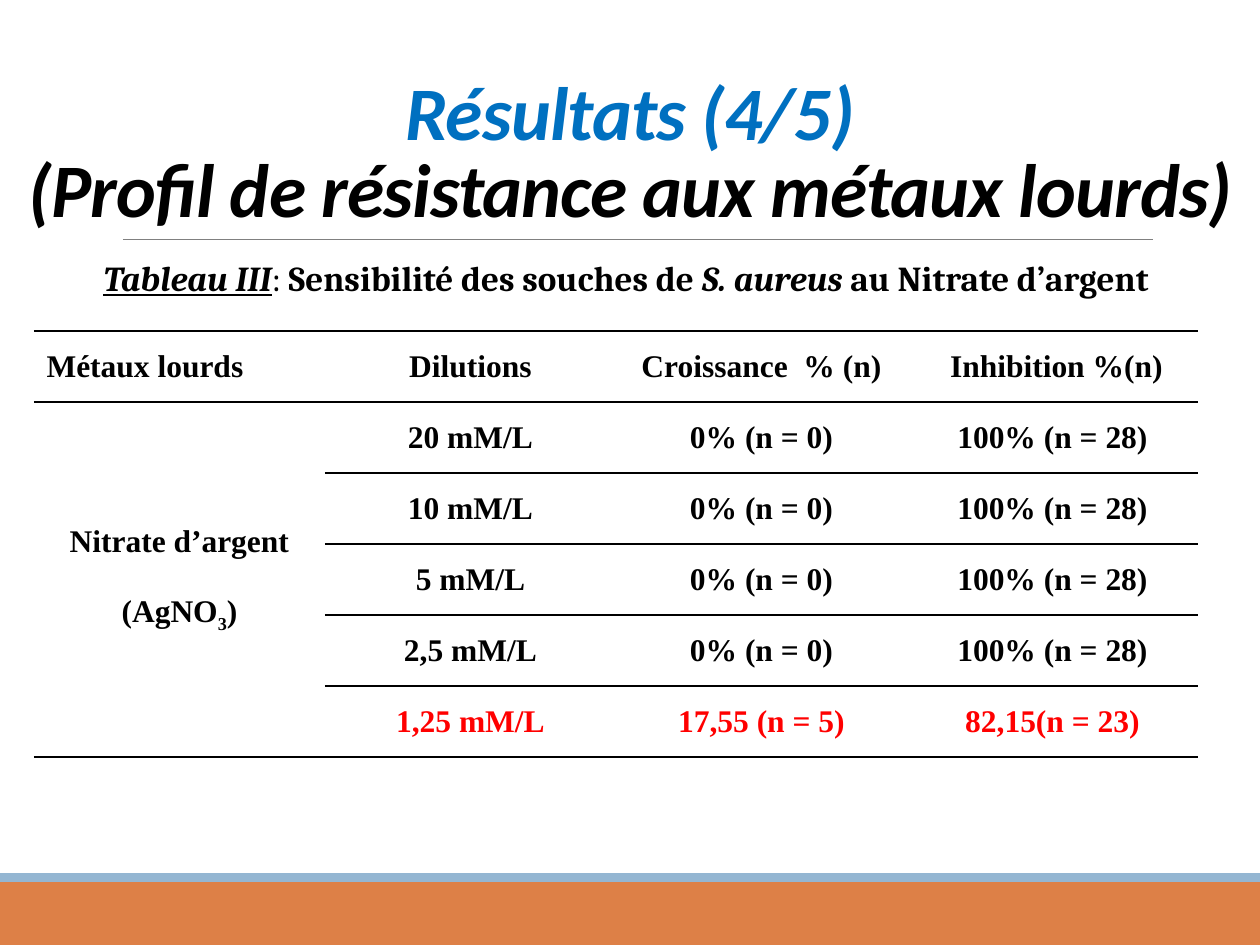
from dataclasses import dataclass
from typing import Optional

from lxml.etree import SubElement
from pptx import Presentation
from pptx.dml.color import RGBColor
from pptx.enum.shapes import MSO_CONNECTOR, MSO_SHAPE
from pptx.enum.text import MSO_ANCHOR, PP_ALIGN
from pptx.oxml.ns import qn
from pptx.util import Emu, Pt

PX = 914400 / 126  # EMU in one px


@dataclass(frozen=True)
class Theme:
    orange: str = "DD8047"
    sky: str = "94B6D2"
    grey: str = "808080"
    blue: str = "0070C0"
    black: str = "000000"
    red: str = "FF0000"
    title_size: float = 43.2
    caption_size: float = 20
    table_size: float = 18
    title_font: str = "Calibri"
    caption_font: str = "Cambria"
    table_font: str = "Times New Roman"


@dataclass(frozen=True)
class Box:
    x: int
    y: int
    w: int
    h: int


@dataclass(frozen=True)
class Piece:
    text: str
    color: str
    bold: bool = True
    italic: bool = False
    underline: bool = False
    spacing: Optional[int] = None  # hundredths of a point
    baseline: Optional[int] = None  # thousandths of a percent


T = Theme()
NO_STYLE = "{2D5ABB26-0587-4C30-8999-92F81FD0307C}"

BANDS = [(Box(0, 882, 1260, 63), T.orange), (Box(0, 873, 1260, 9), T.sky)]
TITLE = [
    Piece("Résultats (4/5)", T.blue, italic=True, spacing=-50),
    Piece("(Profil de résistance aux métaux lourds)", T.black, italic=True, spacing=-50),
]
CAPTION = [
    Piece("Tableau III", T.black, italic=True, underline=True),
    Piece(": ", T.black, bold=False),
    Piece("Sensibilité des souches de ", T.black),
    Piece("S. aureus ", T.black, italic=True),
    Piece("au Nitrate d’argent ", T.black),
]
METAL = [Piece("Nitrate d’argent", T.black)]
FORMULA = [
    Piece("(AgNO", T.black),
    Piece("3", T.black, baseline=-25000),
    Piece(")", T.black),
]
HEADER = ["Métaux lourds", "Dilutions", "Croissance  % (n)", " Inhibition %(n)"]
NONE_GROWN, ALL_STOPPED = "0% (n = 0)", "100% (n = 28)"
RESULTS = [(f"{d} mM/L", NONE_GROWN, ALL_STOPPED) for d in ("20", "10", "5", "2,5")]
RESULTS.append(("1,25 mM/L", "17,55 (n = 5)", "82,15(n = 23)"))
COL_W, ROW_H = 291, 71


def px(n: int) -> Emu:
    return Emu(round(n * PX))


def rgb(color: str) -> RGBColor:
    return RGBColor.from_string(color)


def place(box: Box) -> tuple[Emu, Emu, Emu, Emu]:
    return px(box.x), px(box.y), px(box.w), px(box.h)


def write(p, pieces: list[Piece], font: str, size: float, align=PP_ALIGN.CENTER,
          break_lines: bool = False) -> None:
    p.alignment = align
    for i, piece in enumerate(pieces):
        if break_lines and i:
            p.add_line_break()
        r = p.add_run()
        r.text = piece.text
        f = r.font
        f.name, f.size = font, Pt(size)
        f.bold, f.italic, f.underline = piece.bold, piece.italic, piece.underline
        f.color.rgb = rgb(piece.color)
        for key, value in (("spc", piece.spacing), ("baseline", piece.baseline)):
            if value is not None:
                f._element.set(key, str(value))


def add_band(slide, box: Box, color: str) -> None:
    sp = slide.shapes.add_shape(MSO_SHAPE.RECTANGLE, *place(box))
    sp.shadow.inherit = False
    sp.fill.solid()
    sp.fill.fore_color.rgb = rgb(color)
    sp.line.fill.background()


def add_rule(slide, x1: int, x2: int, y: int) -> None:
    line = slide.shapes.add_connector(MSO_CONNECTOR.STRAIGHT, px(x1), px(y), px(x2), px(y))
    line.line.color.rgb = rgb(T.grey)
    line.line.width = Pt(0.5)
    SubElement(line._element.spPr, qn("a:effectLst"))


def add_text(slide, box: Box, anchor):
    tf = slide.shapes.add_textbox(*place(box)).text_frame
    tf.word_wrap = True
    tf.vertical_anchor = anchor
    return tf.paragraphs[0]


def style_cell(cell, top: bool, bottom: bool) -> None:
    cell.vertical_anchor = MSO_ANCHOR.MIDDLE
    tc_pr = cell._tc.get_or_add_tcPr()
    for tag, shown in (("a:lnT", top), ("a:lnB", bottom)):
        if shown:
            ln = SubElement(tc_pr, qn(tag), w=str(Pt(1)))
            fill = SubElement(ln, qn("a:solidFill"))
            SubElement(fill, qn("a:srgbClr"), val=T.black)
    cell.fill.background()


def add_results_table(slide, x: int, y: int) -> None:
    n_rows, n_cols = len(RESULTS) + 1, len(HEADER)
    box = Box(x, y, COL_W * n_cols, ROW_H * n_rows)
    table = slide.shapes.add_table(n_rows, n_cols, *place(box)).table
    table.first_row = table.horz_banding = False
    table._tbl.tblPr.find(qn("a:tableStyleId")).text = NO_STYLE
    for col in table.columns:
        col.width = px(COL_W)
    for row in table.rows:
        row.height = px(ROW_H)

    # The metal's cell spans every result row
    metal = table.cell(1, 0)
    metal.merge(table.cell(n_rows - 1, 0))
    for i in range(n_rows):
        for j in range(n_cols):
            cell = table.cell(i, j)
            style_cell(cell, top=j > 0 or i < 2,
                       bottom=j > 0 or i in (0, 1, n_rows - 1) and (i != 1 or cell.is_merge_origin))

    # Header and results
    for j, text in enumerate(HEADER):
        write(table.cell(0, j).text_frame.paragraphs[0], [Piece(text, T.black)],
              T.table_font, T.table_size, PP_ALIGN.CENTER if j else PP_ALIGN.LEFT)
    for i, result in enumerate(RESULTS, 1):
        color = T.red if i == len(RESULTS) else T.black
        for j, text in enumerate(result, 1):
            write(table.cell(i, j).text_frame.paragraphs[0], [Piece(text, color)],
                  T.table_font, T.table_size)

    # Metal name and formula
    tf = metal.text_frame
    write(tf.paragraphs[0], METAL, T.table_font, T.table_size)
    p = tf.add_paragraph()
    p.space_before = Pt(20)
    write(p, FORMULA, T.table_font, T.table_size)


def main() -> None:
    prs = Presentation()
    prs.slide_width, prs.slide_height = px(1260), px(945)
    slide = prs.slides.add_slide(prs.slide_layouts[6])

    # Footer bands and title rule
    for box, color in BANDS:
        add_band(slide, box, color)
    add_rule(slide, 123, 1153, 239)

    # Title and caption
    p = add_text(slide, Box(0, 39, 1260, 200), MSO_ANCHOR.BOTTOM)
    p.line_spacing = 0.85
    write(p, TITLE, T.title_font, T.title_size, break_lines=True)
    p = add_text(slide, Box(0, 250, 1260, 55), MSO_ANCHOR.TOP)
    write(p, CAPTION, T.caption_font, T.caption_size)

    add_results_table(slide, 34, 331)
    prs.save("out.pptx")


if __name__ == "__main__":
    main()
